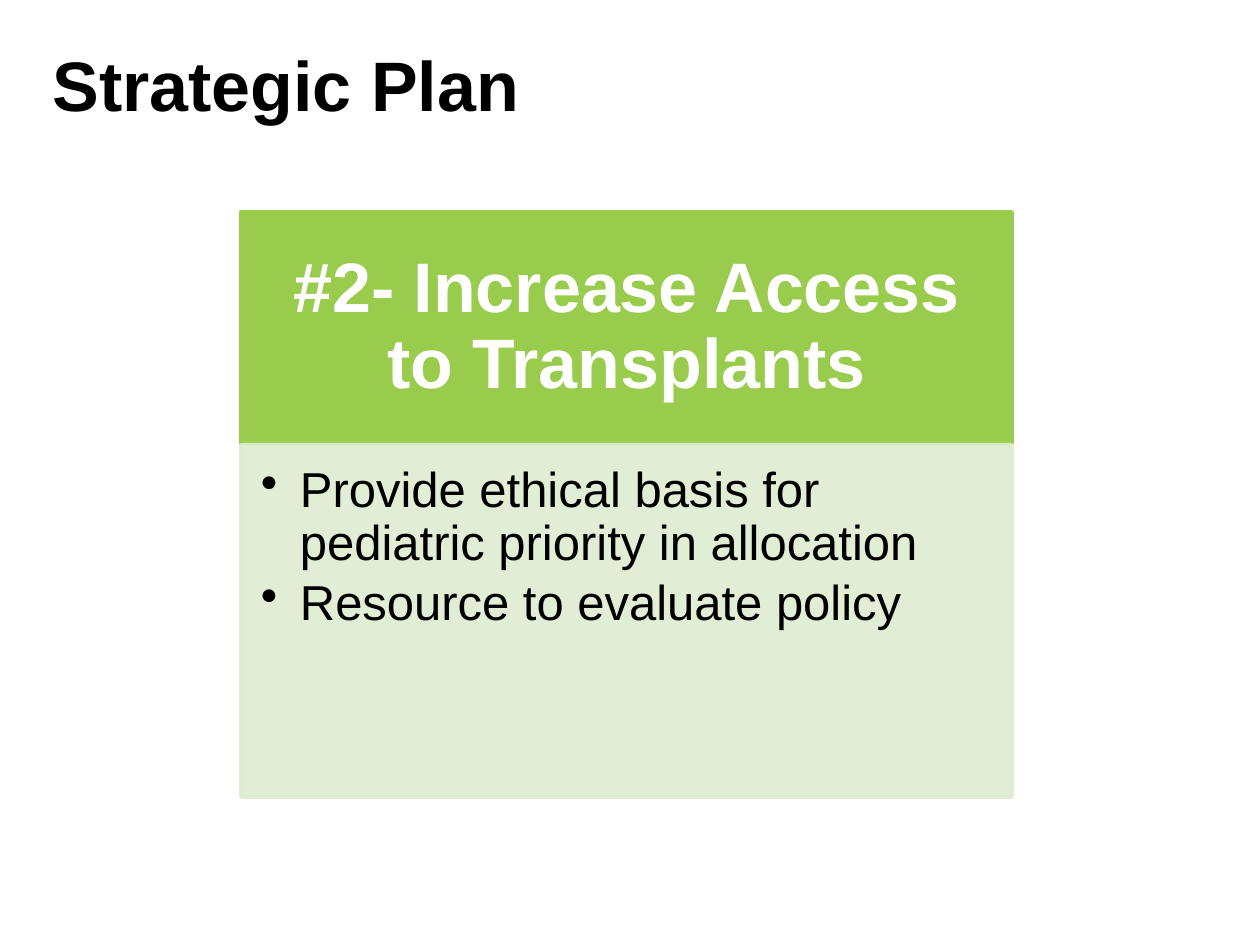
import pptx
import pptx.dml.color
import pptx.enum.shapes
import pptx.enum.text
import pptx.oxml.ns
import pptx.util
from lxml import etree

RGB = pptx.dml.color.RGBColor
ALIGN = pptx.enum.text.PP_ALIGN
ANCHOR = pptx.enum.text.MSO_ANCHOR
qn = pptx.oxml.ns.qn

GREEN = RGB(0x99, 0xCC, 0x4C)
PALE_GREEN = RGB(0xDE, 0xEC, 0xD0)
WHITE = RGB(0xFF, 0xFF, 0xFF)
BLACK = RGB(0x00, 0x00, 0x00)

TITLE = "Strategic Plan"
GOAL = "#2- Increase Access to Transplants"
ACTIONS = [
    "Provide ethical basis for pediatric priority in allocation",
    "Resource to evaluate policy",
]

EMU_PER_PX = 914400 // 126
CARD_LEFT, CARD_TOP, CARD_WIDTH = 241, 212, 771
GOAL_HEIGHT, ACTIONS_HEIGHT, GAP = 231, 352, 2
BULLET_INDENT = 39


def px(n):
    return pptx.util.Emu(n * EMU_PER_PX)


def place(s, left, top, width, height):
    s.left, s.top, s.width, s.height = map(px, (left, top, width, height))


def add_text(p, text, size, color, bold=False):
    r = p.add_run()
    r.text = text
    r.font.name = "Arial"
    r.font.size = pptx.util.Pt(size)
    r.font.bold = bold
    r.font.color.rgb = color


def add_panel(slide, top, height, color, insets, anchor):
    s = slide.shapes.add_shape(
        pptx.enum.shapes.MSO_SHAPE.RECTANGLE,
        px(CARD_LEFT), px(top), px(CARD_WIDTH), px(height))
    s.shadow.inherit = False
    s.fill.solid()
    s.fill.fore_color.rgb = color
    s.line.color.rgb = color
    s.line.width = pptx.util.Pt(2.25)
    tf = s.text_frame
    tf.word_wrap = True
    tf.vertical_anchor = anchor
    tf.margin_left, tf.margin_top, tf.margin_right, tf.margin_bottom = map(px, insets)
    return s


def set_opacity(s, percent):
    for color in s._element.spPr.iter(qn("a:srgbClr")):
        etree.SubElement(color, qn("a:alpha"), val=str(percent * 1000))


def add_bullet(p):
    pPr = p._p.get_or_add_pPr()
    pPr.set("marL", str(px(BULLET_INDENT)))
    pPr.set("indent", str(-px(BULLET_INDENT)))
    etree.SubElement(pPr, qn("a:buChar"), char="•")


def main():
    prs = pptx.Presentation()
    prs.slide_width, prs.slide_height = px(1260), px(945)
    slide = prs.slides.add_slide(prs.slide_layouts[5])

    title = slide.shapes.title
    place(title, 40, -38, 1205, 243)
    title.text_frame.vertical_anchor = ANCHOR.MIDDLE
    p = title.text_frame.paragraphs[0]
    p.alignment = ALIGN.LEFT
    add_text(p, TITLE, 40, BLACK, bold=True)

    goal = add_panel(slide, CARD_TOP, GOAL_HEIGHT, GREEN, (39, 23, 39, 23), ANCHOR.MIDDLE)
    p = goal.text_frame.paragraphs[0]
    p.alignment = ALIGN.CENTER
    p.line_spacing = 0.9
    add_text(p, GOAL, 40, WHITE, bold=True)

    actions = add_panel(slide, CARD_TOP + GOAL_HEIGHT + GAP, ACTIONS_HEIGHT,
                        PALE_GREEN, (20, 20, 28, 30), ANCHOR.TOP)
    set_opacity(actions, 90)
    tf = actions.text_frame
    for i, action in enumerate(ACTIONS):
        p = tf.add_paragraph() if i else tf.paragraphs[0]
        add_bullet(p)
        p.alignment = ALIGN.LEFT
        p.line_spacing = 0.9
        p.space_after = pptx.util.Pt(4.2)
        add_text(p, action, 28, BLACK)

    prs.save("out.pptx")


if __name__ == "__main__":
    main()
